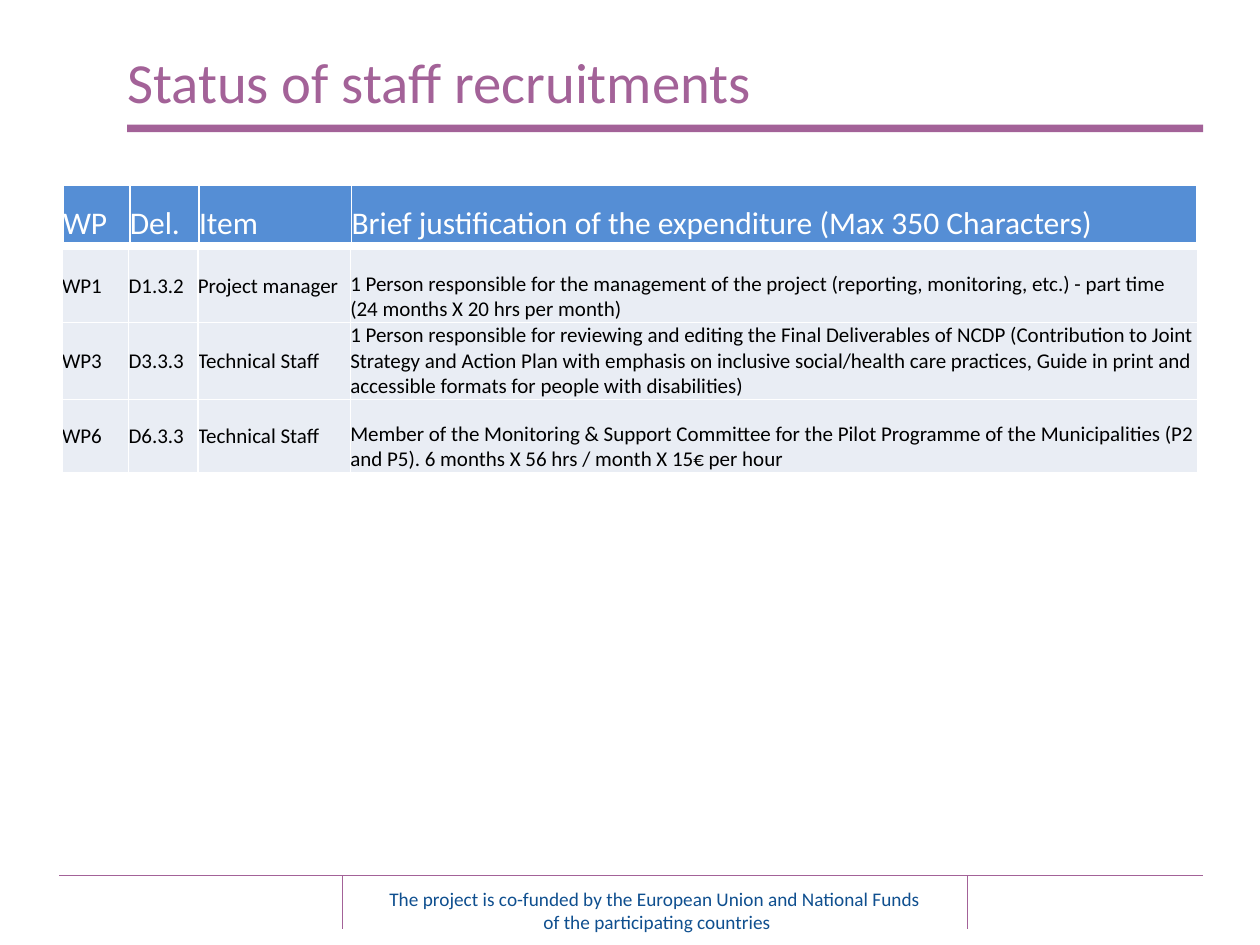
from lxml.etree import SubElement
from pptx import Presentation
from pptx.dml.color import RGBColor
from pptx.enum.shapes import MSO_CONNECTOR, MSO_SHAPE
from pptx.enum.text import MSO_ANCHOR, MSO_AUTO_SIZE, PP_ALIGN
from pptx.oxml import parse_xml
from pptx.oxml.ns import nsdecls, qn
from pptx.util import Inches, Pt

COLORS = {
    "purple": "A36298", "blue": "0F4F8F", "header": "558ED5",
    "row": "E9EDF4", "white": "FFFFFF", "black": "000000",
}


def add_run(p, text, size, color):
    r = p.add_run()
    r.text = text
    r.font.name = "Calibri"
    r.font.size = Pt(size)
    r.font.color.rgb = RGBColor.from_string(COLORS[color])


def add_grid(s, rows, left, top, widths, row_height, size, color, fill, anchors):
    """Add a table with white borders, no cell margins and one anchor per column."""
    frame = s.shapes.add_table(len(rows), len(widths), Inches(left), Inches(top),
                               Inches(sum(widths)), Inches(row_height * len(rows)))
    table = frame.table
    table.first_row = table.horz_banding = False
    for column, width in zip(table.columns, widths):
        column.width = Inches(width)
    for i, row in enumerate(rows):
        table.rows[i].height = Inches(row_height)
        for j, text in enumerate(row):
            cell = table.cell(i, j)
            cell.margin_left = cell.margin_right = 0
            cell.margin_top = cell.margin_bottom = 0
            cell.vertical_anchor = anchors[j]
            cell.fill.solid()
            cell.fill.fore_color.rgb = RGBColor.from_string(COLORS[fill])
            add_run(cell.text_frame.paragraphs[0], text, size, color)
            tc_pr = cell._tc.get_or_add_tcPr()
            for k, side in enumerate(("lnL", "lnR", "lnT", "lnB")):
                tc_pr.insert(k, parse_xml(
                    f'<a:{side} {nsdecls("a")} w="{Pt(1)}"><a:solidFill>'
                    f'<a:srgbClr val="{COLORS["white"]}"/></a:solidFill></a:{side}>'))


prs = Presentation()
prs.slide_width, prs.slide_height = Inches(10), Inches(7.5)
s = prs.slides.add_slide(prs.slide_layouts[5])

# Title and the bar under it
title = s.shapes.title
title.left, title.top = Inches(0.91), Inches(0.3)
title.width, title.height = Inches(8.59), Inches(0.69)
tf = title.text_frame
tf.auto_size = MSO_AUTO_SIZE.NONE
tf.vertical_anchor = MSO_ANCHOR.MIDDLE
p = tf.paragraphs[0]
p.alignment = PP_ALIGN.LEFT
add_run(p, "Status of staff recruitments", 32.4, "purple")

bar = s.shapes.add_shape(MSO_SHAPE.RECTANGLE, Inches(1.01), Inches(0.99),
                         Inches(8.54), Inches(0.06))
bar.shadow.inherit = False
bar.fill.solid()
bar.fill.fore_color.rgb = RGBColor.from_string(COLORS["purple"])
bar.line.fill.background()

# Header table and staff table
header = [("WP", "Del.", "Item",
           "Brief justification of the expenditure (Max 350 Characters)")]
staff = [
    ("WP1", "D1.3.2", "Project manager",
     "1 Person responsible for the management of the project (reporting, "
     "monitoring, etc.) - part time (24 months X 20 hrs per month)"),
    ("WP3", "D3.3.3", "Technical Staff",
     "1 Person responsible for reviewing and editing the Final Deliverables of "
     "NCDP (Contribution to Joint Strategy and Action Plan with emphasis on "
     "inclusive social/health care practices, Guide in print and accessible "
     "formats for people with disabilities)"),
    ("WP6", "D6.3.3", "Technical Staff",
     "Member of the Monitoring & Support Committee for the Pilot Programme of the "
     "Municipalities (P2 and P5). 6 months X 56 hrs / month X 15€ per hour"),
]
label_widths = [0.53, 0.55, 1.21]
add_grid(s, header, 0.5, 1.47, label_widths + [6.71], 0.46, 18, "white", "header",
         [MSO_ANCHOR.BOTTOM] * 4)
add_grid(s, staff, 0.49, 1.98, label_widths + [6.73], 0.58, 12, "black", "row",
         [MSO_ANCHOR.MIDDLE] * 3 + [MSO_ANCHOR.BOTTOM])

# Footer rules and text
for x1, y1, x2, y2 in [(0.47, 6.95, 9.55, 6.95),
                       (2.72, 6.95, 2.72, 7.37),
                       (7.68, 6.95, 7.68, 7.37)]:
    rule = s.shapes.add_connector(MSO_CONNECTOR.STRAIGHT, Inches(x1), Inches(y1),
                                  Inches(x2), Inches(y2))
    rule.line.color.rgb = RGBColor.from_string(COLORS["purple"])
    rule.line.width = Pt(0.75)
    SubElement(rule._element.spPr, qn("a:effectLst"))

footer = s.shapes.add_textbox(Inches(2.75), Inches(6.99), Inches(4.93), Inches(0.47))
tf = footer.text_frame
tf.word_wrap = True
tf.auto_size = MSO_AUTO_SIZE.SHAPE_TO_FIT_TEXT
p = tf.paragraphs[0]
p.alignment = PP_ALIGN.CENTER
add_run(p, "The project is co-funded by the European Union and National Funds ", 11, "blue")
p.add_line_break()
add_run(p, "of the participating countries", 11, "blue")

prs.save("out.pptx")
